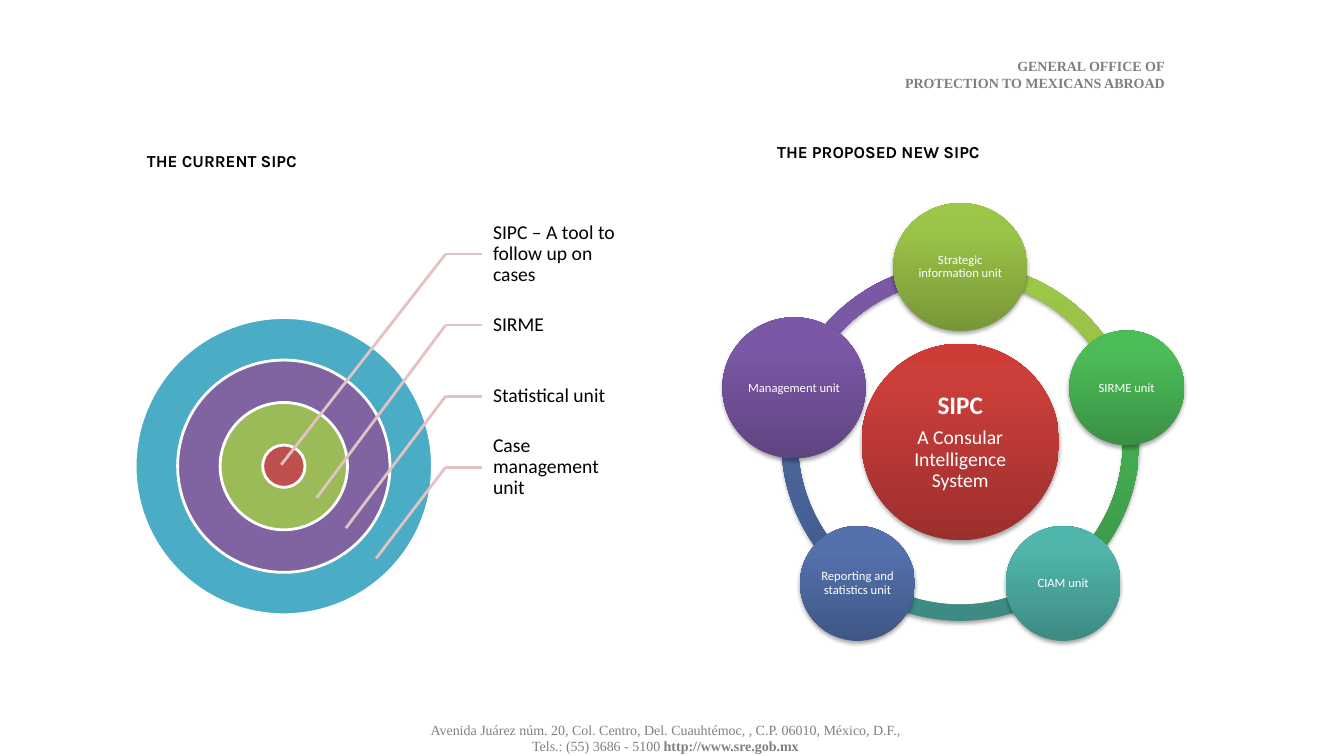
from dataclasses import dataclass
from math import cos, radians, sin

from lxml import etree
from pptx import Presentation
from pptx import util as u
from pptx.dml.color import RGBColor
from pptx.enum import shapes, text
from pptx.oxml.ns import qn

COLUMNS, ROWS = 133.3, 75
CELL = u.Inches(7.5) / ROWS

WHITE = RGBColor(0xFF, 0xFF, 0xFF)
BLACK = RGBColor(0x00, 0x00, 0x00)
HEADER_GREY = RGBColor(0x7F, 0x7F, 0x7F)
FOOTER_GREY = RGBColor(0x80, 0x80, 0x80)
LEADER_PINK = RGBColor(0xE2, 0xC2, 0xC2)
RING_RED = RGBColor(0xC0, 0x50, 0x4D)
RING_GREEN = RGBColor(0x9B, 0xBB, 0x59)
RING_PURPLE = RGBColor(0x80, 0x64, 0xA2)
RING_BLUE = RGBColor(0x4B, 0xAC, 0xC6)

RED = (RGBColor(0x9C, 0x2F, 0x2D), RGBColor(0xCB, 0x3E, 0x3A), RGBColor(0xCE, 0x3B, 0x37))
LIME = (RGBColor(0x77, 0x97, 0x37), RGBColor(0x9B, 0xC3, 0x48), RGBColor(0x9D, 0xC7, 0x46))
GREEN = (RGBColor(0x3A, 0x91, 0x44), RGBColor(0x4C, 0xBC, 0x58), RGBColor(0x4A, 0xBF, 0x57))
TEAL = (RGBColor(0x3D, 0x8B, 0x83), RGBColor(0x50, 0xB5, 0xAA), RGBColor(0x4E, 0xB8, 0xAC))
BLUE = (RGBColor(0x40, 0x57, 0x86), RGBColor(0x54, 0x71, 0xAE), RGBColor(0x52, 0x71, 0xB0))
PURPLE = (RGBColor(0x5F, 0x44, 0x80), RGBColor(0x7B, 0x58, 0xA6), RGBColor(0x7C, 0x57, 0xA8))


@dataclass(frozen=True)
class Run:
    words: str
    bold: bool = False
    size: float | None = None


@dataclass(frozen=True)
class Layer:
    label: str
    color: RGBColor
    target: tuple[float, float]


@dataclass(frozen=True)
class Unit:
    label: str
    gradient: tuple[RGBColor, ...]
    width: float
    height: float


LAYERS = (
    Layer("SIPC – A tool to follow up on cases", RING_RED, (27.9, 46.1)),
    Layer("SIRME", RING_GREEN, (31.4, 49.4)),
    Layer("Statistical unit", RING_PURPLE, (34.3, 52.4)),
    Layer("Case management unit", RING_BLUE, (37.3, 55.4)),
)
UNITS = (
    Unit("Strategic information unit", LIME, 13.3, 12.7),
    Unit("SIRME unit", GREEN, 11.4, 11.4),
    Unit("CIAM unit", TEAL, 11.4, 11.4),
    Unit("Reporting and statistics unit", BLUE, 11.4, 11.4),
    Unit("Management unit", PURPLE, 14.2, 14),
)


def grid(*cells: float) -> list[int]:
    return [round(cell * CELL) for cell in cells]


def put_text(holder, paragraphs, *, size, color, font="Calibri", align=text.PP_ALIGN.LEFT,
             anchor=text.MSO_ANCHOR.MIDDLE, insets=(1, 0.5, 1, 0.5), spacing=None,
             after=None, hanging=False) -> None:
    frame = holder.text_frame
    frame.word_wrap = True
    frame.vertical_anchor = anchor
    frame.margin_left, frame.margin_top, frame.margin_right, frame.margin_bottom = grid(*insets)
    for index, runs in enumerate(paragraphs):
        paragraph = frame.add_paragraph() if index else frame.paragraphs[0]
        paragraph.alignment = align
        if spacing:
            paragraph.line_spacing = spacing
        if after:
            paragraph.space_after = u.Pt(after)
        if hanging:
            properties = paragraph._p.get_or_add_pPr()
            properties.set("marL", str(u.Inches(0.5)))
            properties.set("indent", str(u.Inches(-0.25)))
        for run in runs:
            for line_number, line in enumerate(run.words.splitlines()):
                if line_number:
                    paragraph.add_line_break()
                piece = paragraph.add_run()
                piece.text = line
                piece.font.name = font
                piece.font.size = u.Pt(run.size or size)
                piece.font.bold = run.bold
                piece.font.color.rgb = color


def add_centered(slide, kind, x: float, y: float, width: float, height: float):
    shape = slide.shapes.add_shape(kind, *grid(x - width / 2, y - height / 2, width, height))
    shape.shadow.inherit = False
    return shape


def add_glossy(slide, kind, x: float, y: float, width: float, height: float, gradient):
    shape = add_centered(slide, kind, x, y, width, height)
    shape.line.fill.background()
    shape.fill.gradient()
    shape.fill.gradient_angle = 90
    properties = shape._element.spPr
    stops = properties.find(qn("a:gradFill")).find(qn("a:gsLst"))
    for stop in list(stops):
        stops.remove(stop)
    for position, color in zip((0, 80, 100), gradient):
        stop = etree.SubElement(stops, qn("a:gs"), pos=str(position * 1000))
        etree.SubElement(stop, qn("a:srgbClr"), val=str(color))
    shadow = etree.SubElement(properties.find(qn("a:effectLst")), qn("a:outerShdw"),
                              blurRad=str(u.Pt(3.1)), dist=str(u.Pt(1.8)),
                              dir="5400000", rotWithShape="0")
    shade = etree.SubElement(shadow, qn("a:srgbClr"), val=str(BLACK))
    etree.SubElement(shade, qn("a:alpha"), val="35000")
    return shape


def add_leader(slide, start: tuple[float, float], end: tuple[float, float]):
    leader = slide.shapes.add_connector(shapes.MSO_CONNECTOR.STRAIGHT, *grid(*start, *end))
    leader.line.color.rgb = LEADER_PINK
    leader.line.width = u.Pt(2)
    etree.SubElement(leader._element.spPr, qn("a:effectLst"))
    return leader


def draw_current(slide) -> None:
    for level, layer in reversed(list(enumerate(LAYERS))):
        diameter = 4.2 + 8.43 * level
        ring = add_centered(slide, shapes.MSO_SHAPE.OVAL, 28.15, 46.25, diameter, diameter)
        ring.fill.solid()
        ring.fill.fore_color.rgb = layer.color
        ring.line.color.rgb = WHITE
        ring.line.width = u.Pt(2)
    for level, layer in enumerate(LAYERS):
        middle = 25.2 + 7.05 * level
        label = slide.shapes.add_textbox(*grid(47.8, middle - 3.55, 14.8, 7.1))
        put_text(label, [[Run(layer.label)]], size=14, color=BLACK,
                 insets=(1.1, 0.2, 0.2, 0.2), spacing=0.9, after=5)
        add_leader(slide, (44.2, middle), (47.8, middle)).end_connect(label, 1)
        add_leader(slide, (44.2, middle), layer.target)


def draw_proposed(slide) -> None:
    x, y, orbit, step = 95.25, 43.85, 17.35, 72
    angles = [(270 + step * index) % 360 for index in range(len(UNITS))]
    for angle, unit in reversed(list(zip(angles, UNITS))):
        arc = add_glossy(slide, shapes.MSO_SHAPE.BLOCK_ARC, x, y, 35.5, 35.5, unit.gradient)
        arc.adjustments[0] = angle * 0.6
        arc.adjustments[1] = (angle + step) % 360 * 0.6
        arc.adjustments[2] = 0.046
    hub = add_glossy(slide, shapes.MSO_SHAPE.OVAL, x, y, 19.6, 19.5, RED)
    put_text(hub, [[Run("SIPC", bold=True, size=18)], [Run("A Consular Intelligence System")]],
             size=14, color=WHITE, align=text.PP_ALIGN.CENTER, insets=(0.3,) * 4,
             spacing=0.9, after=6)
    for angle, unit in zip(angles, UNITS):
        turn = radians(angle)
        node = add_glossy(slide, shapes.MSO_SHAPE.OVAL, x + orbit * cos(turn),
                          y + orbit * sin(turn), unit.width, unit.height, unit.gradient)
        put_text(node, [[Run(unit.label)]], size=9, color=WHITE, insets=(0.1,) * 4,
                 align=text.PP_ALIGN.CENTER, spacing=0.9, after=3)


def draw_headings(slide) -> None:
    current = slide.shapes.add_textbox(*grid(11.1, 14.2, 20.4, 5.2))
    current.fill.solid()
    current.fill.fore_color.rgb = WHITE
    proposed = slide.shapes.add_textbox(*grid(73.6, 13.3, 32.7, 5.2))
    for heading, words in ((current, "THE CURRENT SIPC"), (proposed, "THE PROPOSED NEW SIPC")):
        put_text(heading, [[Run(words, bold=True)]], size=12, color=BLACK, font="Karla",
                 anchor=text.MSO_ANCHOR.TOP, spacing=1.15, after=10, hanging=True)
    office = slide.shapes.add_textbox(*grid(74.8, 5.7, 40.7, 3.4))
    put_text(office, [[Run("GENERAL OFFICE OF\nPROTECTION TO MEXICANS ABROAD", bold=True)]],
             size=10, color=HEADER_GREY, font="Times New Roman",
             align=text.PP_ALIGN.RIGHT, insets=(0,) * 4)


def draw_address(slide) -> None:
    address = slide.shapes.add_textbox(*grid(34.5, 71.2, 63, 4))
    put_text(address, [
        [Run("Avenida Juárez núm. 20, Col. Centro, Del. Cuauhtémoc, , C.P. 06010, México, D.F.,")],
        [Run("Tels.: (55) 3686 - 5100 "), Run("http://www.sre.gob.mx", bold=True)],
    ], size=10, color=FOOTER_GREY, font="Times New Roman", align=text.PP_ALIGN.CENTER)


def main() -> None:
    deck = Presentation()
    deck.slide_width, deck.slide_height = grid(COLUMNS, ROWS)
    slide = deck.slides.add_slide(deck.slide_layouts[6])
    draw_address(slide)
    draw_current(slide)
    draw_proposed(slide)
    draw_headings(slide)
    deck.save("out.pptx")


if __name__ == "__main__":
    main()
